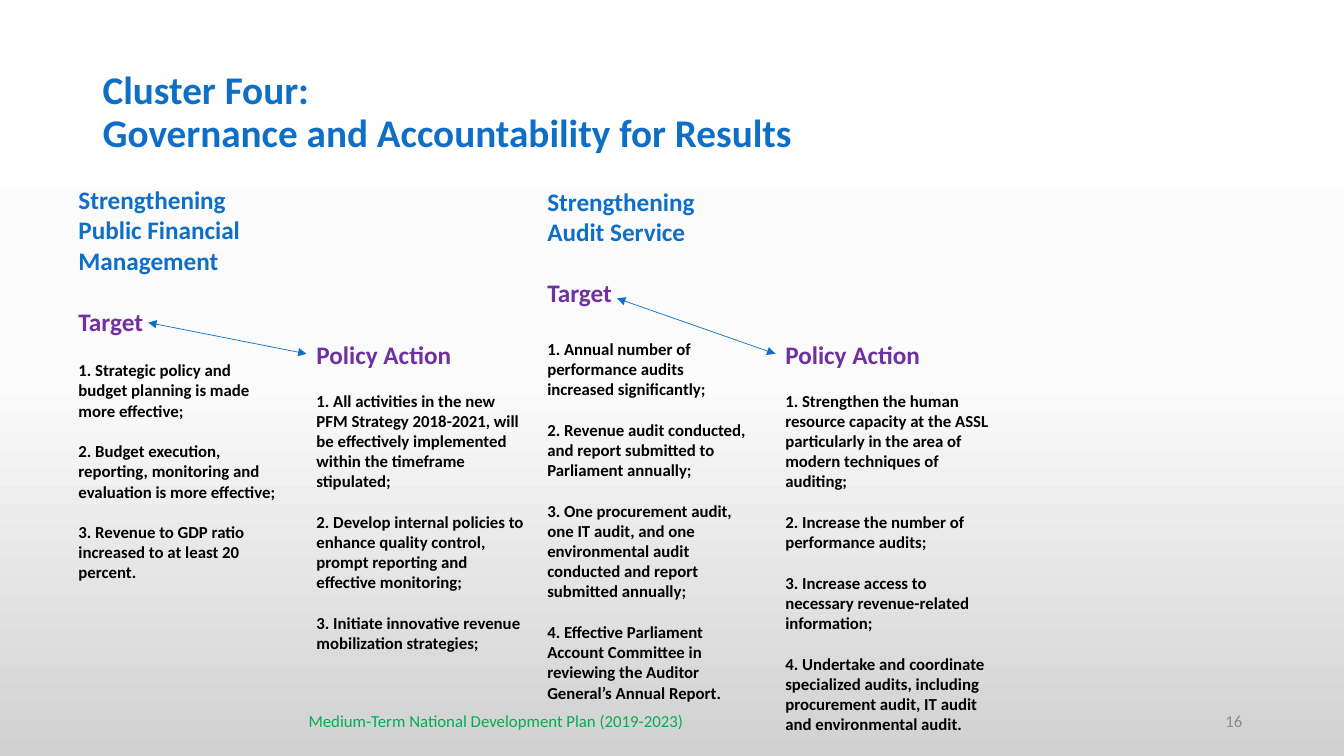
from copy import deepcopy

from lxml.etree import SubElement
from pptx import Presentation
from pptx.dml.color import RGBColor
from pptx.enum.shapes import MSO_CONNECTOR
from pptx.enum.text import MSO_ANCHOR, MSO_AUTO_SIZE, PP_ALIGN
from pptx.oxml.ns import qn
from pptx.util import Inches, Pt

COLORS = {
    "blue": "0F6FC6", "purple": "7030A0", "black": "000000",
    "green": "00B050", "gray": "8C8C8C",
}
BACKGROUND = [(0, "FFFFFF"), (0.5, "FBFBFB"), (1, "D1D1D1")]

# Column grid: each topic holds a target column and a policy column.
MARGIN = 0.68
TOPIC_PITCH = 4.65
POLICY_OFFSET = 2.36
TARGET_WIDTH, POLICY_WIDTH = 2.2, 2.28
POLICY_TOP = 3.32
ARROW_OFFSET, ARROW_END = 0.79, 3.51
FOOTER_TOP, FOOTER_HEIGHT = 6.95, 0.4

HEADING_SIZE, ITEM_SIZE = 18, 12
LINE_HEIGHT = 1.22

TOPICS = [
    {
        "heading": "Strengthening Public Financial Management",
        "top": 1.78, "target_height": 4.27, "policy_height": 3.43,
        "gap_size": 14, "arrow_start": 3.2,
        "targets": [
            "1. Strategic policy and budget planning is made more effective;",
            "2. Budget execution, reporting, monitoring and evaluation is more effective;",
            "3. Revenue to GDP ratio increased to at least 20 percent.",
        ],
        "policies": [
            "1. All activities in the new PFM Strategy 2018-2021, will be effectively "
            "implemented within the timeframe stipulated;",
            "2. Develop internal policies to enhance quality control, prompt reporting "
            "and effective monitoring;",
            "3. Initiate innovative revenue mobilization strategies;",
        ],
    },
    {
        "heading": "Strengthening Audit Service",
        "top": 1.8, "target_height": 5.25, "policy_height": 4.04,
        "gap_size": 18, "arrow_start": 2.96,
        "targets": [
            "1. Annual number of performance audits increased significantly;",
            "2. Revenue audit conducted, and report submitted to Parliament annually;",
            "3. One procurement audit, one IT audit, and one environmental audit "
            "conducted and report submitted annually;",
            "4. Effective Parliament Account Committee in reviewing the Auditor "
            "General’s Annual Report.",
        ],
        "policies": [
            "1. Strengthen the human resource capacity at the ASSL particularly in the "
            "area of modern techniques of auditing;",
            "2. Increase the number of performance audits;",
            "3. Increase access to necessary revenue-related information;",
            "4. Undertake and coordinate specialized audits, including procurement "
            "audit, IT audit and environmental audit.",
        ],
    },
]


def paint_background(slide):
    fill = slide.background.fill
    fill.gradient()
    fill.gradient_angle = 270
    stop_list = next(slide.element.iter(qn("a:gsLst")))
    stop_list.insert(1, deepcopy(stop_list[0]))
    for stop, (position, color) in zip(fill.gradient_stops, BACKGROUND):
        stop.position = position
        stop.color.rgb = RGBColor.from_string(color)


def add_box(slide, left, top, width, height):
    box = slide.shapes.add_textbox(*map(Inches, (left, top, width, height)))
    box.text_frame.word_wrap = True
    return box.text_frame


def write(para, text, size, color, bold=False):
    para.text = text
    for span in para.runs:
        font = span.font
        font.name, font.size, font.bold = "Calibri", Pt(size), bold
        font.color.rgb = RGBColor.from_string(COLORS[color])


def add_label(slide, place, text, size, color, align=PP_ALIGN.LEFT, bold=False):
    frame = add_box(slide, *place)
    frame.vertical_anchor = MSO_ANCHOR.MIDDLE
    para = frame.paragraphs[0]
    para.alignment = align
    write(para, text, size, color, bold)
    return para


def add_column(slide, place, headings, items, gap_size):
    """Stack headings and items, parted by one line; gap_size is the line above the items."""
    frame = add_box(slide, *place)
    frame.auto_size = MSO_AUTO_SIZE.SHAPE_TO_FIT_TEXT
    rows = [(text, HEADING_SIZE, color, HEADING_SIZE) for text, color in headings]
    rows += [(text, ITEM_SIZE, "black", ITEM_SIZE if number else gap_size)
             for number, text in enumerate(items)]
    for number, (text, size, color, gap) in enumerate(rows):
        para = frame.add_paragraph() if number else frame.paragraphs[0]
        write(para, text, size, color, bold=True)
        if number:
            para.space_before = Pt(gap * LINE_HEIGHT)


def add_double_arrow(slide, start, end):
    arrow = slide.shapes.add_connector(
        MSO_CONNECTOR.STRAIGHT, *map(Inches, (*start, *end)))
    arrow.line.width = Pt(0.5)
    arrow.line.color.rgb = RGBColor.from_string(COLORS["blue"])
    properties = arrow.element.spPr
    outline = properties.find(qn("a:ln"))
    for tag in ("a:headEnd", "a:tailEnd"):
        SubElement(outline, qn(tag), type="triangle")
    SubElement(properties, qn("a:effectLst"))


def add_topic(slide, left, topic):
    policy_left = left + POLICY_OFFSET
    add_column(slide, (left, topic["top"], TARGET_WIDTH, topic["target_height"]),
               [(topic["heading"], "blue"), ("Target", "purple")],
               topic["targets"], topic["gap_size"])
    add_column(slide, (policy_left, POLICY_TOP, POLICY_WIDTH, topic["policy_height"]),
               [("Policy Action", "purple")], topic["policies"], ITEM_SIZE)
    add_double_arrow(slide, (left + ARROW_OFFSET, topic["arrow_start"]),
                     (policy_left, ARROW_END))


def main():
    deck = Presentation()
    deck.slide_width, deck.slide_height = Inches(13.33), Inches(7.5)
    slide = deck.slides.add_slide(deck.slide_layouts[6])
    paint_background(slide)

    title = add_label(slide, (0.92, 0.4, 11.5, 1.45),
                      "Cluster Four:\vGovernance and Accountability for Results",
                      28, "blue", bold=True)
    title.line_spacing = 0.9
    add_label(slide, (0.92, FOOTER_TOP, 8, FOOTER_HEIGHT),
              "Medium-Term National Development Plan (2019-2023)",
              12, "green", PP_ALIGN.CENTER)
    add_label(slide, (9.42, FOOTER_TOP, 3, FOOTER_HEIGHT), "16",
              12, "gray", PP_ALIGN.RIGHT)

    for number, topic in enumerate(TOPICS):
        add_topic(slide, MARGIN + number * TOPIC_PITCH, topic)

    deck.save("out.pptx")


if __name__ == "__main__":
    main()
